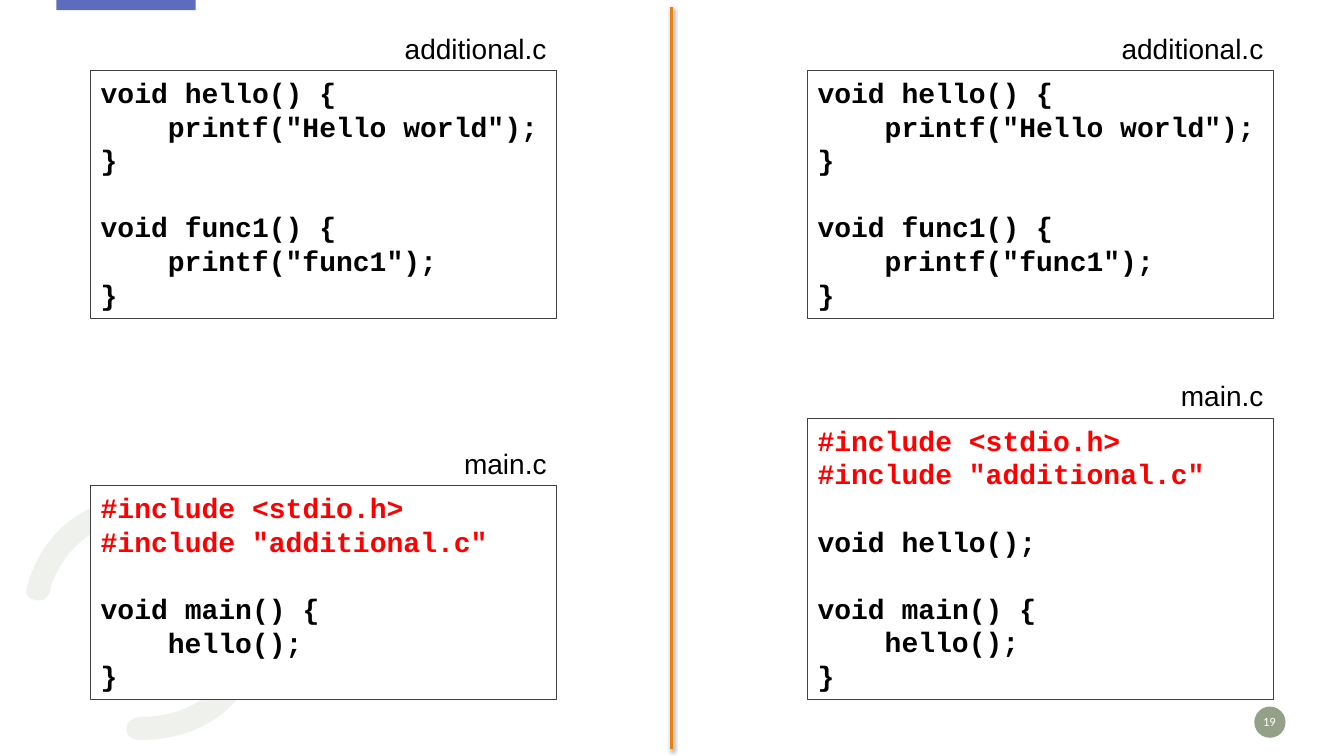
from typing import NamedTuple

from lxml import etree
from pptx import Presentation, util as u
from pptx.dml.color import RGBColor
from pptx.enum import shapes, text
from pptx.oxml.ns import qn

BLACK, RED, WHITE, SAGE = "000000", "FF0000", "FFFFFF", "94A088"
LEFT_COLUMN, RIGHT_COLUMN = 0.9, 8.01
PANEL_WIDTH, CAPTION_HEIGHT = 4.62, 0.44
LINE_PITCH, INDENT = 24, 48
DIVIDER_X = 6.66


class CodeLine(NamedTuple):
    words: str
    indented: bool = False
    color: str = BLACK
    gap: bool = False


class Listing(NamedTuple):
    filename: str
    left: float
    top: float
    height: float
    lines: list[CodeLine]


ADDITIONAL = [
    CodeLine("void hello() {"),
    CodeLine('printf("Hello world");', indented=True),
    CodeLine("}"),
    CodeLine("void func1() {", gap=True),
    CodeLine('printf("func1");', indented=True),
    CodeLine("}"),
]
INCLUDES = [
    CodeLine("#include <stdio.h>", color=RED),
    CodeLine('#include "additional.c"', color=RED),
]
PROTOTYPE = [CodeLine("void hello();", gap=True)]
MAIN = [
    CodeLine("void main() {", gap=True),
    CodeLine("hello();", indented=True),
    CodeLine("}"),
]
LISTINGS = [
    Listing("additional.c", LEFT_COLUMN, 0.7, 2.46, ADDITIONAL),
    Listing("main.c", LEFT_COLUMN, 4.82, 2.12, INCLUDES + MAIN),
    Listing("main.c", RIGHT_COLUMN, 4.15, 2.79, INCLUDES + PROTOTYPE + MAIN),
    Listing("additional.c", RIGHT_COLUMN, 0.7, 2.46, ADDITIONAL),
]

ARC_UNITS = 100
ARC_START = (248, 547)
ARC_CURVES = [
    ((270, 581), (275, 623), (253, 667)),
    ((231, 710), (194, 732), (145, 734)),
    ((139, 734), (131, 735), (127, 729)),
    ((122, 720), (129, 711), (142, 711)),
    ((198, 711), (242, 670), (243, 616)),
    ((245, 567), (211, 524), (164, 515)),
    ((115, 506), (68, 533), (51, 580)),
    ((51, 581), (50, 583), (50, 585)),
    ((48, 594), (43, 597), (34, 595)),
    ((23, 592), (26, 584), (28, 578)),
    ((40, 540), (64, 513), (102, 499)),
    ((153, 479), (211, 497), ARC_START),
]


def paint(color_format, color: str) -> None:
    color_format.rgb = RGBColor.from_string(color)


def fill_shape(shape, color: str, outline: str = "") -> None:
    shape.shadow.inherit = False
    shape.fill.solid()
    paint(shape.fill.fore_color, color)
    if outline:
        paint(shape.line.color, outline)
        shape.line.width = u.Pt(0.75)
    else:
        shape.line.fill.background()


def add_block(parent, kind, left: float, top: float, width: float, height: float,
              color: str, outline: str = ""):
    block = parent.add_shape(kind, u.Inches(left), u.Inches(top), u.Inches(width), u.Inches(height))
    fill_shape(block, color, outline)
    return block


def write(paragraph, words: str, *, size: float = 20, font: str = "Arial", color: str = BLACK,
          bold: bool = False, align=text.PP_ALIGN.LEFT) -> None:
    paragraph.alignment = align
    run = paragraph.add_run()
    run.text = words
    run.font.size = u.Pt(size)
    run.font.name = font
    run.font.bold = bold
    paint(run.font.color, color)


def add_listing(slide, listing: Listing) -> None:
    group = slide.shapes.add_group_shape().shapes
    panel = add_block(group, shapes.MSO_SHAPE.RECTANGLE, listing.left, listing.top,
                      PANEL_WIDTH, listing.height, WHITE, "404040")
    code = panel.text_frame
    code.word_wrap = True
    code.vertical_anchor = text.MSO_ANCHOR.TOP
    for position, line in enumerate(listing.lines):
        paragraph = code.add_paragraph() if position else code.paragraphs[0]
        write(paragraph, line.words, font="Courier New", color=line.color, bold=True)
        paragraph.line_spacing = u.Pt(LINE_PITCH)
        if line.gap:
            paragraph.space_before = u.Pt(LINE_PITCH)
        if line.indented:
            paragraph._p.get_or_add_pPr().set("marL", str(u.Pt(INDENT)))
    caption = group.add_textbox(u.Inches(listing.left), u.Inches(listing.top - CAPTION_HEIGHT),
                                u.Inches(PANEL_WIDTH), u.Inches(CAPTION_HEIGHT)).text_frame
    caption.word_wrap = True
    write(caption.paragraphs[0], listing.filename, align=text.PP_ALIGN.RIGHT)


def add_arc(slide) -> None:
    ends = [curve[-1] for curve in ARC_CURVES]
    outline = slide.shapes.build_freeform(*ARC_START, scale=u.Inches(1) / ARC_UNITS)
    outline.add_line_segments(ends, close=True)
    arc = outline.convert_to_shape()
    fill_shape(arc, "E0E4DB")
    left, top = min(x for x, _ in ends), min(y for _, y in ends)
    for segment, curve in zip(list(arc._element.iter(qn("a:lnTo"))), ARC_CURVES):
        segment.tag = qn("a:cubicBezTo")
        segment.clear()
        for x, y in curve:
            etree.SubElement(segment, qn("a:pt"), x=str(x - left), y=str(y - top))
    tint = arc._element.spPr.find(qn("a:solidFill")).find(qn("a:srgbClr"))
    etree.SubElement(tint, qn("a:alpha"), val="50000")


def add_divider(slide) -> None:
    divider = slide.shapes.add_connector(shapes.MSO_CONNECTOR.STRAIGHT, u.Inches(DIVIDER_X),
                                         u.Inches(0.07), u.Inches(DIVIDER_X), u.Inches(7.43))
    paint(divider.line.color, "E48312")
    divider.line.width = u.Pt(2)
    effects = etree.SubElement(divider._element.spPr, qn("a:effectLst"))
    shadow = etree.SubElement(effects, qn("a:outerShdw"), blurRad=str(u.Pt(3.1)),
                              dist=str(u.Pt(1.6)), dir="5400000", rotWithShape="0")
    shade = etree.SubElement(shadow, qn("a:srgbClr"), val=BLACK)
    etree.SubElement(shade, qn("a:alpha"), val="38000")


def add_page_number(slide) -> None:
    add_block(slide.shapes, shapes.MSO_SHAPE.OVAL, 12.44, 7.01, 0.31, 0.31, SAGE)
    number = slide.shapes.add_textbox(u.Inches(12.43), u.Inches(7.06),
                                      u.Inches(0.32), u.Inches(0.2)).text_frame
    number.margin_left = number.margin_right = number.margin_top = number.margin_bottom = 0
    number.word_wrap = True
    number.vertical_anchor = text.MSO_ANCHOR.MIDDLE
    write(number.paragraphs[0], "19", size=9, font="Calibri", color=WHITE,
          align=text.PP_ALIGN.CENTER)


def main() -> None:
    deck = Presentation()
    deck.slide_width, deck.slide_height = u.Inches(13.33), u.Inches(7.5)
    slide = deck.slides.add_slide(deck.slide_layouts[6])
    add_block(slide.shapes, shapes.MSO_SHAPE.RECTANGLE, 0.56, 0, 1.38, 0.1, "5D6CBF")
    add_arc(slide)
    add_page_number(slide)
    for listing in LISTINGS:
        add_listing(slide, listing)
    add_divider(slide)
    deck.save("out.pptx")


if __name__ == "__main__":
    main()
